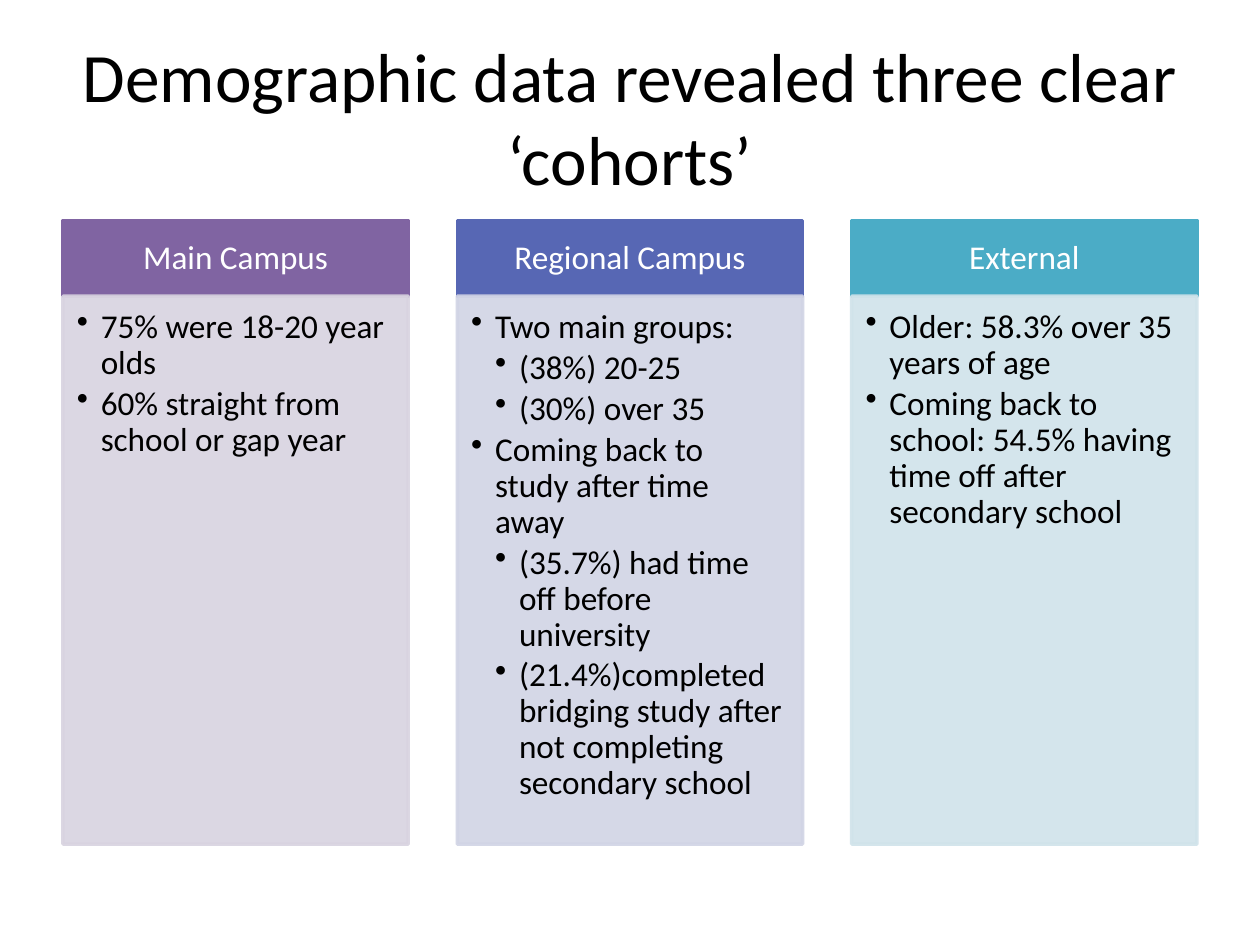
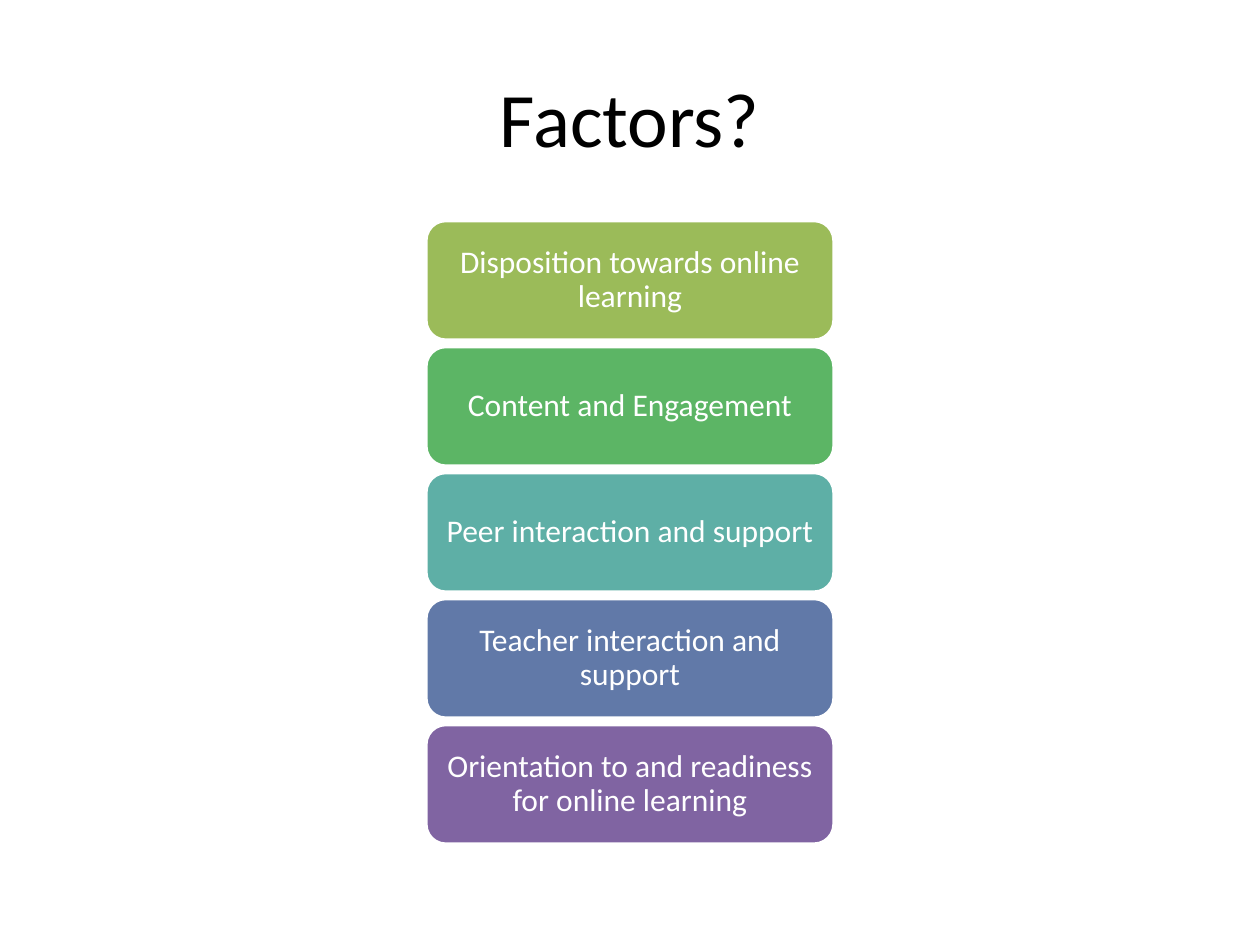
import lxml.etree
import pptx
import pptx.dml.color
import pptx.enum.shapes
import pptx.enum.text
import pptx.oxml.ns
import pptx.util

PX = 9144  # 100 px to the inch
RGB = pptx.dml.color.RGBColor
SHAPE = pptx.enum.shapes.MSO_SHAPE
ALIGN = pptx.enum.text.PP_ALIGN
ANCHOR = pptx.enum.text.MSO_ANCHOR
qn = pptx.oxml.ns.qn

FONT = "Calibri"
BLACK = RGB(0x00, 0x00, 0x00)
WHITE = RGB(0xFF, 0xFF, 0xFF)
PURPLE = RGB(0x80, 0x64, 0xA2)
INDIGO = RGB(0x57, 0x67, 0xB4)
AQUA = RGB(0x4B, 0xAC, 0xC6)
PALE_PURPLE = RGB(0xD8, 0xD3, 0xE0)
PALE_INDIGO = RGB(0xD1, 0xD4, 0xE5)
PALE_AQUA = RGB(0xD0, 0xE3, 0xEA)
OLIVE = RGB(0x9B, 0xBB, 0x59)
GREEN = RGB(0x5C, 0xB5, 0x65)
TEAL = RGB(0x5E, 0xAF, 0xA6)
BLUE = RGB(0x61, 0x79, 0xA8)

CONTENT_TOP = 175
INDENT = 19

TITLES = [("Demographic data revealed three clear ‘cohorts’", 39.6), ("Factors?", 44)]

# Each bullet is (level, text)
COHORTS = [
    ("Main Campus", PURPLE, PALE_PURPLE, [
        (0, "75% were 18-20 year olds"),
        (0, "60% straight from school or gap year"),
    ]),
    ("Regional Campus", INDIGO, PALE_INDIGO, [
        (0, "Two main groups:"),
        (1, "(38%) 20-25"),
        (1, "(30%) over 35"),
        (0, "Coming back to study after time away"),
        (1, "(35.7%) had time off before university"),
        (1, "(21.4%)completed bridging study after not completing secondary school"),
    ]),
    ("External", AQUA, PALE_AQUA, [
        (0, "Older: 58.3% over 35 years of age"),
        (0, "Coming back to school: 54.5% having time off after secondary school"),
    ]),
]

FACTORS = [
    ("Disposition towards online learning", OLIVE),
    ("Content and Engagement", GREEN),
    ("Peer interaction and support", TEAL),
    ("Teacher interaction and support", BLUE),
    ("Orientation to and readiness for online learning", PURPLE),
]


def write_text(shape, lines, size, color, margins, align=ALIGN.CENTER,
               anchor=ANCHOR.MIDDLE, line_spacing=0.9):
    """Fill the shape with lines; margins are left, top, right, bottom in px."""
    frame = shape.text_frame
    frame.word_wrap = True
    frame.vertical_anchor = anchor
    (frame.margin_left, frame.margin_top,
     frame.margin_right, frame.margin_bottom) = [margin * PX for margin in margins]
    frame.text = "\n".join(lines)
    for paragraph in frame.paragraphs:
        paragraph.alignment = align
        paragraph.line_spacing = line_spacing
        font = paragraph.runs[0].font
        font.name = FONT
        font.size = pptx.util.Pt(size)
        font.color.rgb = color


def add_box(slide, kind, left, top, width, height, fill, line):
    shape = slide.shapes.add_shape(kind, left * PX, top * PX, width * PX, height * PX)
    shape.shadow.inherit = False
    shape.fill.solid()
    shape.fill.fore_color.rgb = fill
    shape.line.color.rgb = line
    shape.line.width = pptx.util.Pt(2)
    return shape


presentation = pptx.Presentation()
presentation.slide_width = 1000 * PX
presentation.slide_height = 750 * PX

slides = []
for title, size in TITLES:
    slide = presentation.slides.add_slide(presentation.slide_layouts[6])
    title_box = slide.shapes.add_textbox(50 * PX, 30 * PX, 900 * PX, 125 * PX)
    write_text(title_box, [title], size, BLACK, (10, 5, 10, 5), line_spacing=1.0)
    slides.append(slide)
cohort_slide, factor_slide = slides

# Three cohort columns: a header above a translucent bulleted panel
COLUMN_WIDTH, COLUMN_STEP = 274, 313
HEADER_HEIGHT, PANEL_HEIGHT = 60, 435
for index, (name, color, pale_color, bullets) in enumerate(COHORTS):
    left = 50 + index * COLUMN_STEP
    header = add_box(cohort_slide, SHAPE.RECTANGLE, left, CONTENT_TOP,
                     COLUMN_WIDTH, HEADER_HEIGHT, color, color)
    write_text(header, [name], 19, WHITE, (15, 8, 15, 8))

    panel = add_box(cohort_slide, SHAPE.RECTANGLE, left, CONTENT_TOP + HEADER_HEIGHT,
                    COLUMN_WIDTH, PANEL_HEIGHT, pale_color, pale_color)
    for color_element in panel._element.spPr.iter(qn("a:srgbClr")):
        lxml.etree.SubElement(color_element, qn("a:alpha"), val="90000")
    write_text(panel, [text for level, text in bullets], 19, BLACK,
               (11, 11, 15, 17), ALIGN.LEFT, ANCHOR.TOP)
    for paragraph, (level, text) in zip(panel.text_frame.paragraphs, bullets):
        paragraph.level = level
        paragraph.space_after = pptx.util.Pt(2.85)
        properties = paragraph._p.get_or_add_pPr()
        properties.set("marL", str((level + 1) * INDENT * PX))
        properties.set("indent", str(-INDENT * PX))
        lxml.etree.SubElement(properties, qn("a:buChar"), char="•")

# Stack of factors
FACTOR_HEIGHT, FACTOR_STEP = 95, 100
for index, (factor, color) in enumerate(FACTORS):
    factor_box = add_box(factor_slide, SHAPE.ROUNDED_RECTANGLE, 338,
                         CONTENT_TOP + index * FACTOR_STEP, 324, FACTOR_HEIGHT,
                         color, WHITE)
    # The rounded corners inset the text by a further 5 px
    write_text(factor_box, [factor], 18, WHITE, (7, 4, 7, 4))

presentation.save("out.pptx")
